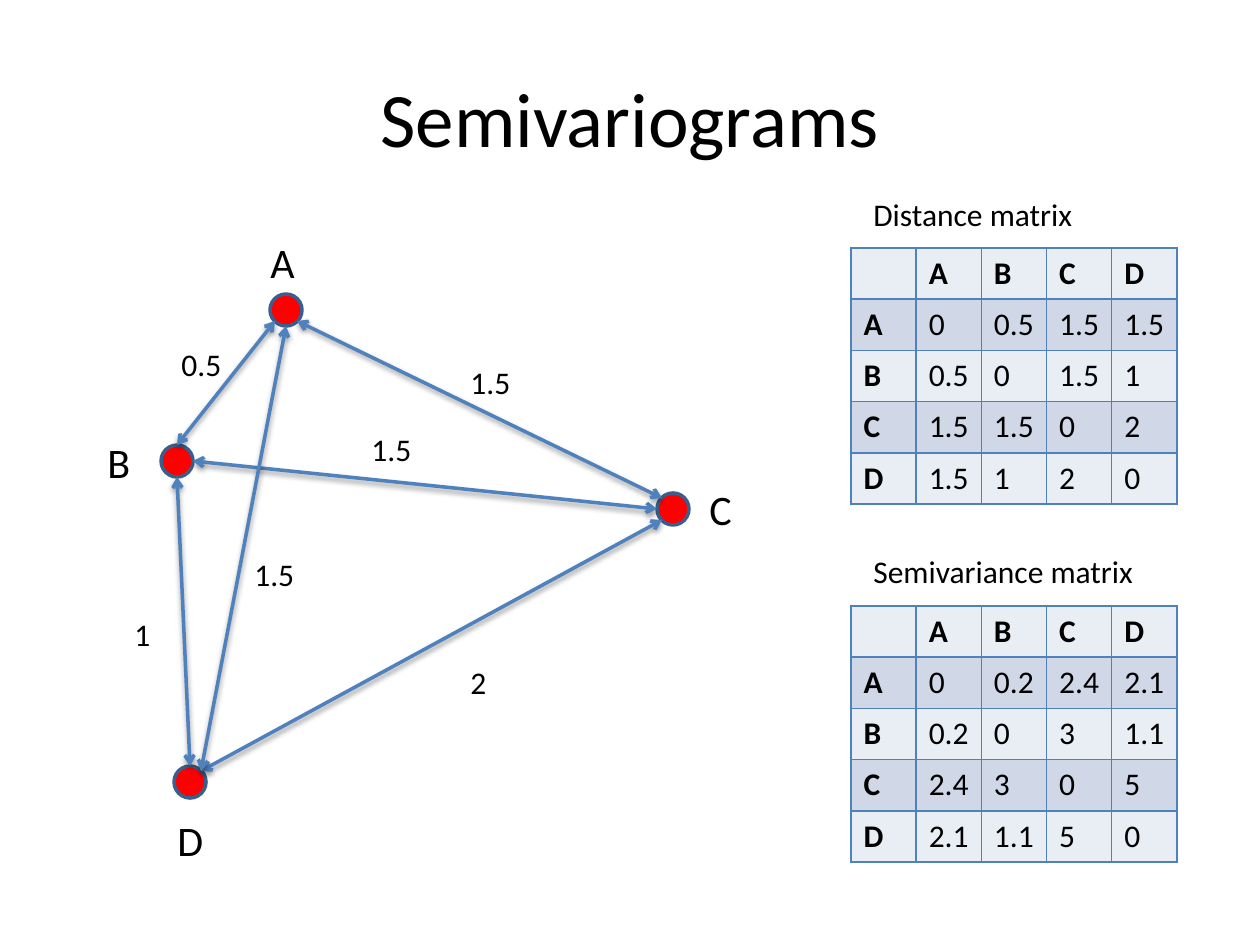
import pptx
import pptx.dml.color
import pptx.enum.shapes
import pptx.enum.text
import pptx.oxml
import pptx.oxml.ns
import pptx.util

PX = 914400 / 126
FONT = "Calibri"
BLACK, RED, BLUE, DARK_BLUE = "000000", "FF0000", "4F81BD", "3A5F8C"
ROW_FILLS = ("E9EDF4", "D0D8E8")
NODE_RADIUS = 16
DIAGONAL = 11
MATRIX_WIDTH, MATRIX_HEIGHT = 326, 256
CELL_MARGIN_RIGHT = 6

TITLE = ("Semivariograms", 63, 38, 1134, 158)
NODES = {"A": (286, 310), "C": (673, 509), "B": (177, 461), "D": (190, 782)}
SITES = {
    "top": (0, -NODE_RADIUS),
    "bottom": (0, NODE_RADIUS),
    "left": (-NODE_RADIUS, 0),
    "right": (NODE_RADIUS, 0),
    "top left": (-DIAGONAL, -DIAGONAL),
    "top right": (DIAGONAL, -DIAGONAL),
    "bottom left": (-DIAGONAL, DIAGONAL),
    "bottom right": (DIAGONAL, DIAGONAL),
}
EDGES = [
    ("A", "bottom left", "B", "top"),
    ("C", "left", "B", "right"),
    ("A", "bottom right", "C", "top left"),
    ("B", "bottom", "D", "top"),
    ("C", "bottom left", "D", "top right"),
    ("A", "bottom", "D", "top right"),
]
# text, left, top, width
DISTANCE_LABELS = [
    ("0.5", 169, 339, 65),
    ("1.5", 458, 357, 65),
    ("2", 458, 657, 42),
    ("1", 122, 609, 42),
    ("1.5", 242, 549, 65),
    ("1.5", 359, 424, 65),
]
NODE_LABELS = [
    ("A", 258, 230, 50),
    ("B", 95, 430, 48),
    ("C", 697, 477, 48),
    ("D", 165, 808, 52),
]
MATRIX_LABELS = [
    ("Distance matrix", 861, 189, 227),
    ("Semivariance matrix", 861, 546, 287),
]
# left, top, rows
MATRICES = [
    (851, 248, [
        ["", "A", "B", "C", "D"],
        ["A", "0", "0.5", "1.5", "1.5"],
        ["B", "0.5", "0", "1.5", "1"],
        ["C", "1.5", "1.5", "0", "2"],
        ["D", "1.5", "1", "2", "0"],
    ]),
    (851, 606, [
        ["", "A", "B", "C", "D"],
        ["A", "0", "0.2", "2.4", "2.1"],
        ["B", "0.2", "0", "3", "1.1"],
        ["C", "2.4", "3", "0", "5"],
        ["D", "2.1", "1.1", "5", "0"],
    ]),
]

NAMESPACE = pptx.oxml.ns.nsdecls("a")
SHADOW = (
    f'<a:effectLst {NAMESPACE}><a:outerShdw blurRad="40000" dist="20000" dir="5400000"'
    f' rotWithShape="0"><a:srgbClr val="{BLACK}"><a:alpha val="38000"/></a:srgbClr>'
    "</a:outerShdw></a:effectLst>"
)


def emu(*lengths):
    return [round(length * PX) for length in lengths]


def color(value):
    return pptx.dml.color.RGBColor.from_string(value)


def set_attributes(target, values):
    for name, value in values.items():
        setattr(target, name, value)


def write(frame, text, size, bold=False):
    run = frame.paragraphs[0].add_run()
    run.text = text
    set_attributes(run.font, {"name": FONT, "size": pptx.util.Pt(size), "bold": bold})
    run.font.color.rgb = color(BLACK)


def set_line(line, value):
    line.color.rgb = color(value)
    line.width = pptx.util.Pt(2)


def add_title(slide):
    text, *box = TITLE
    frame = slide.shapes.add_textbox(*emu(*box)).text_frame
    set_attributes(frame, {
        "word_wrap": True,
        "vertical_anchor": pptx.enum.text.MSO_ANCHOR.MIDDLE,
    })
    write(frame, text, 44)
    frame.paragraphs[0].alignment = pptx.enum.text.PP_ALIGN.CENTER


def add_label(slide, text, left, top, width, size, height):
    frame = slide.shapes.add_textbox(*emu(left, top, width, height)).text_frame
    set_attributes(frame, {
        "word_wrap": False,
        "auto_size": pptx.enum.text.MSO_AUTO_SIZE.SHAPE_TO_FIT_TEXT,
    })
    write(frame, text, size)


def add_node(slide, x, y):
    diameter = 2 * NODE_RADIUS
    node = slide.shapes.add_shape(
        pptx.enum.shapes.MSO_SHAPE.OVAL,
        *emu(x - NODE_RADIUS, y - NODE_RADIUS, diameter, diameter))
    node.shadow.inherit = False
    node.fill.solid()
    node.fill.fore_color.rgb = color(RED)
    set_line(node.line, DARK_BLUE)


def site_position(node, site):
    return [center + offset for center, offset in zip(NODES[node], SITES[site])]


def add_edge(slide, start, start_site, end, end_site):
    connector = slide.shapes.add_connector(
        pptx.enum.shapes.MSO_CONNECTOR.STRAIGHT,
        *emu(*site_position(start, start_site), *site_position(end, end_site)))
    set_line(connector.line, BLUE)
    line = connector.line._get_or_add_ln()
    for tag in ("headEnd", "tailEnd"):
        line.append(pptx.oxml.parse_xml(f'<a:{tag} {NAMESPACE} type="arrow"/>'))
    connector._element.spPr.append(pptx.oxml.parse_xml(SHADOW))


def add_borders(cell):
    properties = cell._tc.get_or_add_tcPr()
    for index, side in enumerate("LRTB"):
        properties.insert(index, pptx.oxml.parse_xml(
            f'<a:ln{side} {NAMESPACE} w="12700"><a:solidFill>'
            f'<a:srgbClr val="{BLUE}"/></a:solidFill></a:ln{side}>'))


def add_matrix(slide, left, top, rows):
    count = len(rows)
    table = slide.shapes.add_table(
        count, count, *emu(left, top, MATRIX_WIDTH, MATRIX_HEIGHT)).table
    set_attributes(table, {"first_row": False, "horz_banding": False})
    for row_index, row in enumerate(rows):
        for column_index, text in enumerate(row):
            cell = table.cell(row_index, column_index)
            cell.margin_right = emu(CELL_MARGIN_RIGHT)[0]
            cell.fill.solid()
            cell.fill.fore_color.rgb = color(ROW_FILLS[row_index % 2])
            add_borders(cell)
            if text:
                is_header = row_index == 0 or column_index == 0
                write(cell.text_frame, text, 18, is_header)


def main():
    presentation = pptx.Presentation()
    set_attributes(presentation, {
        "slide_width": pptx.util.Inches(10),
        "slide_height": pptx.util.Inches(7.5),
    })
    slide = presentation.slides.add_slide(presentation.slide_layouts[6])
    add_title(slide)
    for center in NODES.values():
        add_node(slide, *center)
    for edge in EDGES:
        add_edge(slide, *edge)
    for label in DISTANCE_LABELS:
        add_label(slide, *label, size=18, height=50)
    for label in NODE_LABELS:
        add_label(slide, *label, size=24, height=63)
    for matrix in MATRICES:
        add_matrix(slide, *matrix)
    for label in MATRIX_LABELS:
        add_label(slide, *label, size=18, height=50)
    presentation.save("out.pptx")


if __name__ == "__main__":
    main()
